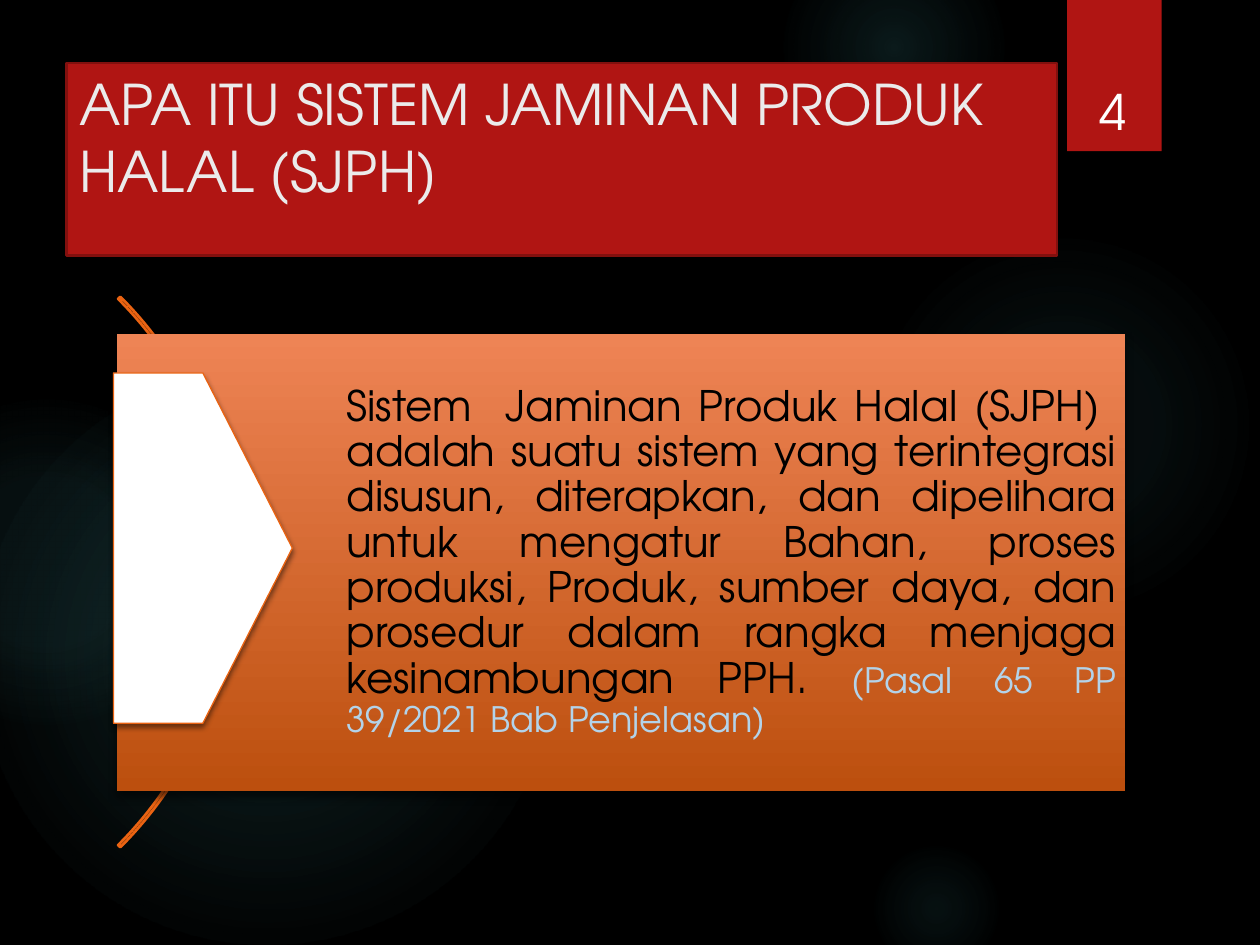
from dataclasses import dataclass

from lxml.etree import SubElement
from pptx import Presentation
from pptx.dml.color import RGBColor
from pptx.enum.shapes import MSO_SHAPE
from pptx.enum.text import MSO_ANCHOR, PP_ALIGN
from pptx.oxml.ns import qn
from pptx.util import Inches, Pt


@dataclass(frozen=True)
class Theme:
    font: str = "TeX Gyre Adventor"
    background: str = "000000"
    glow: str = "50B9C1"
    red: str = "B01513"
    dark_red: str = "82100E"
    orange: str = "EA6312"
    light_orange: str = "EE8455"
    dark_orange: str = "BC4F0E"
    white: str = "FFFFFF"
    title_text: str = "EBEBEB"
    body_text: str = "000000"
    source_text: str = "B3D3EA"
    title_size: int = 32
    number_size: int = 28
    body_size: int = 24
    source_size: int = 20


class SlideBuilder:
    """Places elements on a grid of 100 columns by 75 rows."""

    columns, rows = 100, 75

    def __init__(self, presentation, theme):
        self.theme = theme
        self.column = presentation.slide_width / self.columns
        self.row = presentation.slide_height / self.rows
        self.slide = presentation.slides.add_slide(presentation.slide_layouts[6])
        fill = self.slide.background.fill
        fill.solid()
        fill.fore_color.rgb = RGBColor.from_string(theme.background)

    def place(self, left, top, width, height):
        return (round(left * self.column), round(top * self.row),
                round(width * self.column), round(height * self.row))

    def shape(self, kind, box, fill=None, line=None, line_width=1, shadow=None):
        shape = self.slide.shapes.add_shape(kind, *self.place(*box))
        shape.shadow.inherit = False
        if fill:
            shape.fill.solid()
            shape.fill.fore_color.rgb = RGBColor.from_string(fill)
        else:
            shape.fill.background()
        if line:
            shape.line.color.rgb = RGBColor.from_string(line)
            shape.line.width = Pt(line_width)
        else:
            shape.line.fill.background()
        if shadow:
            self.cast_shadow(shape, *shadow)
        return shape

    def add_color(self, parent, color, opacity):
        element = SubElement(parent, qn("a:srgbClr"), val=color)
        SubElement(element, qn("a:alpha"), val=str(opacity * 1000))

    def cast_shadow(self, shape, opacity, blur, distance):
        effects = shape._element.spPr.find(qn("a:effectLst"))
        outer = SubElement(effects, qn("a:outerShdw"), blurRad=str(Pt(blur)),
                           dist=str(Pt(distance)), dir="5400000", rotWithShape="0")
        self.add_color(outer, "000000", opacity)

    def gradient(self, shape, stops, radial=False):
        """Fills with (position, colour, opacity) stops, downwards or from the centre."""
        shape.fill.gradient()
        gradient = shape._element.spPr.find(qn("a:gradFill"))
        for child in list(gradient):
            gradient.remove(child)
        stop_list = SubElement(gradient, qn("a:gsLst"))
        for position, color, opacity in stops:
            stop = SubElement(stop_list, qn("a:gs"), pos=str(position * 1000))
            self.add_color(stop, color, opacity)
        if radial:
            circle = SubElement(gradient, qn("a:path"), path="circle")
            SubElement(circle, qn("a:fillToRect"), l="50000", t="50000",
                       r="50000", b="50000")
        else:
            SubElement(gradient, qn("a:lin"), ang="5400000", scaled="0")

    def glow(self, left, top, size, center, middle, edge):
        shape = self.shape(MSO_SHAPE.OVAL, (left, top, size, size))
        color = self.theme.glow
        self.gradient(shape, [(0, color, center), (36, color, middle), (edge, color, 0)],
                      radial=True)

    def text(self, shape, runs, align=PP_ALIGN.LEFT, anchor=MSO_ANCHOR.MIDDLE,
             space_after=6, line_spacing=1.0):
        """Writes one paragraph of (words, size, colour) runs."""
        frame = shape.text_frame
        frame.word_wrap = True
        frame.vertical_anchor = anchor
        paragraph = frame.paragraphs[0]
        paragraph.alignment = align
        paragraph.space_after = Pt(space_after)
        paragraph.line_spacing = line_spacing
        for words, size, color in runs:
            run = paragraph.add_run()
            run.text = words
            run.font.name = self.theme.font
            run.font.size = Pt(size)
            run.font.color.rgb = RGBColor.from_string(color)
        return frame

    def text_box(self, box, runs, **options):
        return self.text(self.slide.shapes.add_textbox(*self.place(*box)), runs, **options)


def main():
    presentation = Presentation()
    presentation.slide_width, presentation.slide_height = Inches(10), Inches(7.5)
    theme = Theme()
    builder = SlideBuilder(presentation, theme)
    soft_shadow = (45, 3, 2)

    # Background glows: left, top, size, centre and middle opacity, edge
    for glow in [(68.9, 18.3, 30.8, 7, 6, 69), (62.2, -5, 17.5, 14, 7, 73),
                 (68.9, 66.7, 10.8, 9, 5, 66), (-1.7, 29.2, 45.8, 11, 10, 75),
                 (-9.2, 31.7, 25.8, 8, 8, 72)]:
        builder.glow(*glow)

    # Slide number tab
    builder.shape(MSO_SHAPE.RECTANGLE, (84.7, 0, 7.5, 12), theme.red, shadow=soft_shadow)
    builder.text_box((84.9, 3.2, 6.9, 8.4), [("4", theme.number_size, theme.white)],
                     align=PP_ALIGN.CENTER, anchor=MSO_ANCHOR.BOTTOM)

    # Title
    title = builder.shape(MSO_SHAPE.RECTANGLE, (5.3, 5, 78.6, 15.3), theme.red,
                          theme.dark_red, 1.5)
    builder.text(title, [("APA ITU SISTEM JAMINAN PRODUK HALAL (SJPH)",
                          theme.title_size, theme.title_text)], anchor=MSO_ANCHOR.TOP)

    # Arc behind the definition
    arc = builder.shape(MSO_SHAPE.BLOCK_ARC, (-43.2, 14.5, 61.8, 61.8),
                        line=theme.orange, line_width=1.5)
    for index, value in enumerate((189, 27, 0.004)):
        arc.adjustments[index] = value

    # Definition panel
    panel_box = (9.3, 26.5, 80, 36.3)
    panel = builder.shape(MSO_SHAPE.RECTANGLE, panel_box, shadow=(60, 5, 3))
    builder.gradient(panel, [(0, theme.light_orange, 100), (100, theme.dark_orange, 100)])
    definition = (
        "Sistem  Jaminan Produk Halal (SJPH)  adalah suatu sistem yang terintegrasi "
        "disusun, diterapkan, dan dipelihara untuk mengatur Bahan, proses produksi, "
        "Produk, sumber daya, dan prosedur dalam rangka menjaga kesinambungan PPH. ")
    frame = builder.text_box(
        panel_box,
        [(definition, theme.body_size, theme.body_text),
         ("(Pasal 65 PP 39/2021 Bab Penjelasan)", theme.source_size, theme.source_text)],
        align=PP_ALIGN.JUSTIFY, space_after=8, line_spacing=0.9)
    frame.margin_left = Inches(1.82)
    frame.margin_top = frame.margin_right = frame.margin_bottom = Inches(0.07)

    # Pointer
    builder.shape(MSO_SHAPE.PENTAGON, (9, 29.6, 14.2, 27.8), theme.white,
                  theme.orange, 0.75, soft_shadow)

    presentation.save("out.pptx")


if __name__ == "__main__":
    main()
